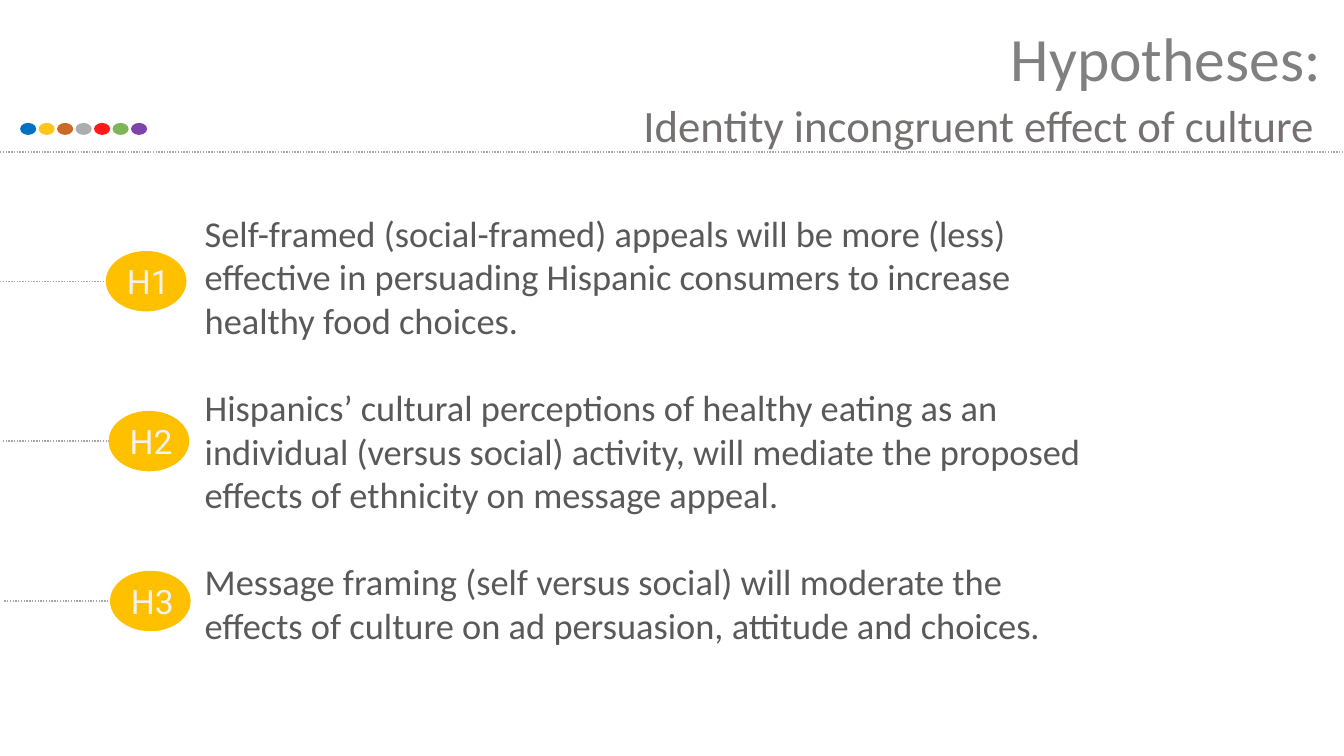
from lxml import etree
from pptx import Presentation
from pptx.dml.color import RGBColor as RGB
from pptx.enum.dml import MSO_LINE as Dash
from pptx.enum.shapes import MSO_CONNECTOR as Conn, MSO_SHAPE as Shape
from pptx.enum.text import MSO_ANCHOR as Anchor, MSO_AUTO_SIZE as Fit, PP_ALIGN as Align
from pptx.oxml.ns import qn
from pptx.util import Pt

HEX = {"title": "808080", "sub": "767171", "body": "595959", "rule": "A6A6A6",
       "badge": "FFC000", "label": "F2F2F2"}
DOTS = ["0070C0", "FFC000", "C55A11", "A5A5A5", "FF0000", "70AD47", "7030A0"]
CLAIMS = [
    "Self-framed (social-framed) appeals will be more (less) effective in "
    "persuading Hispanic consumers to increase healthy food choices.",
    "Hispanics’ cultural perceptions of healthy eating as an individual (versus "
    "social) activity, will mediate the proposed effects of ethnicity on message appeal.",
    "Message framing (self versus social) will moderate the effects of culture "
    "on ad persuasion, attitude and choices.",
]

deck = Presentation()
deck.slide_width, deck.slide_height = Pt(960), Pt(540)
slide = deck.slides.add_slide(deck.slide_layouts[1])
shapes = slide.shapes


def write(box, texts, size, color, align, face="Calibri", gap=0):
    """Fill a shape with paragraphs, with gap points between them."""
    frame = box.text_frame
    frame.word_wrap, frame.auto_size = True, Fit.NONE
    frame.vertical_anchor = Anchor.TOP
    frame.text = "\n".join(texts)
    for i, para in enumerate(frame.paragraphs):
        props = para._p.get_or_add_pPr()
        props.set("marL", "0")
        props.set("indent", "0")
        etree.SubElement(props, qn("a:buNone"))
        para.alignment = align
        para.space_before = Pt(gap if i else 0)
        font = para.font
        font.name, font.size = face, Pt(size)
        font.color.rgb = RGB.from_string(HEX[color])
    return frame


def place(box, left, top, width, height):
    box.left, box.top, box.width, box.height = map(Pt, (left, top, width, height))


# Title, subtitle and hypotheses
title, body = shapes.title, slide.placeholders[1]
place(title, 653, 10.8, 298, 60.5)
write(title, ["Hypotheses:"], 44, "title", Align.RIGHT)
place(body, 139, 146.9, 650, 322.6)
write(body, CLAIMS, 26, "body", Align.LEFT, gap=31)

sub = shapes.add_textbox(Pt(243.4), Pt(47.5), Pt(707.8), Pt(57.6))
frame = write(sub, ["Identity incongruent effect of culture "], 32, "sub", Align.RIGHT)
frame.margin_left = frame.margin_right = Pt(5)
frame.margin_top = frame.margin_bottom = Pt(2.9)
frame.paragraphs[0].line_spacing = 1.5

# Dotted rules: one under the heading, one leading to each badge
STARTS = [0, 2, 3]
TOP, STEP = 200.9, 114.2
rules = [(0, 108.7, 960)]
rules += [(x, TOP + i * STEP, 113) for i, x in enumerate(STARTS)]
for x, y, width in rules:
    rule = shapes.add_connector(Conn.STRAIGHT, Pt(x), Pt(y), Pt(x + width), Pt(y))
    rule.line.color.rgb = RGB.from_string(HEX["rule"])
    rule.line.width = Pt(1)
    rule.line.dash_style = Dash.ROUND_DOT
    etree.SubElement(rule._element.spPr, qn("a:effectLst"))

# Ovals: numbered badges, then the row of dots
ovals = [(x + 75.6, TOP - 21.6 + i * STEP, 57.6, 43.2, HEX["badge"], f"H{i + 1}")
         for i, x in enumerate(STARTS)]
ovals += [(14.4 + i * 13.2, 87.8, 11.5, 8.6, color, "") for i, color in enumerate(DOTS)]
for x, y, width, height, color, label in ovals:
    oval = shapes.add_shape(Shape.OVAL, Pt(x), Pt(y), Pt(width), Pt(height))
    oval.shadow.inherit = False
    oval.fill.solid()
    oval.fill.fore_color.rgb = RGB.from_string(color)
    oval.line.fill.background()
    if label:
        frame = write(oval, [label], 24, "label", Align.CENTER, "Roboto")
        frame.vertical_anchor = Anchor.MIDDLE
        frame.margin_left, frame.margin_right = Pt(3), 0
        frame.margin_top = frame.margin_bottom = 0
    elif color != DOTS[0]:
        tint = oval._element.spPr.find(".//" + qn("a:srgbClr"))
        etree.SubElement(tint, qn("a:alpha"), val="90000")

deck.save("out.pptx")
